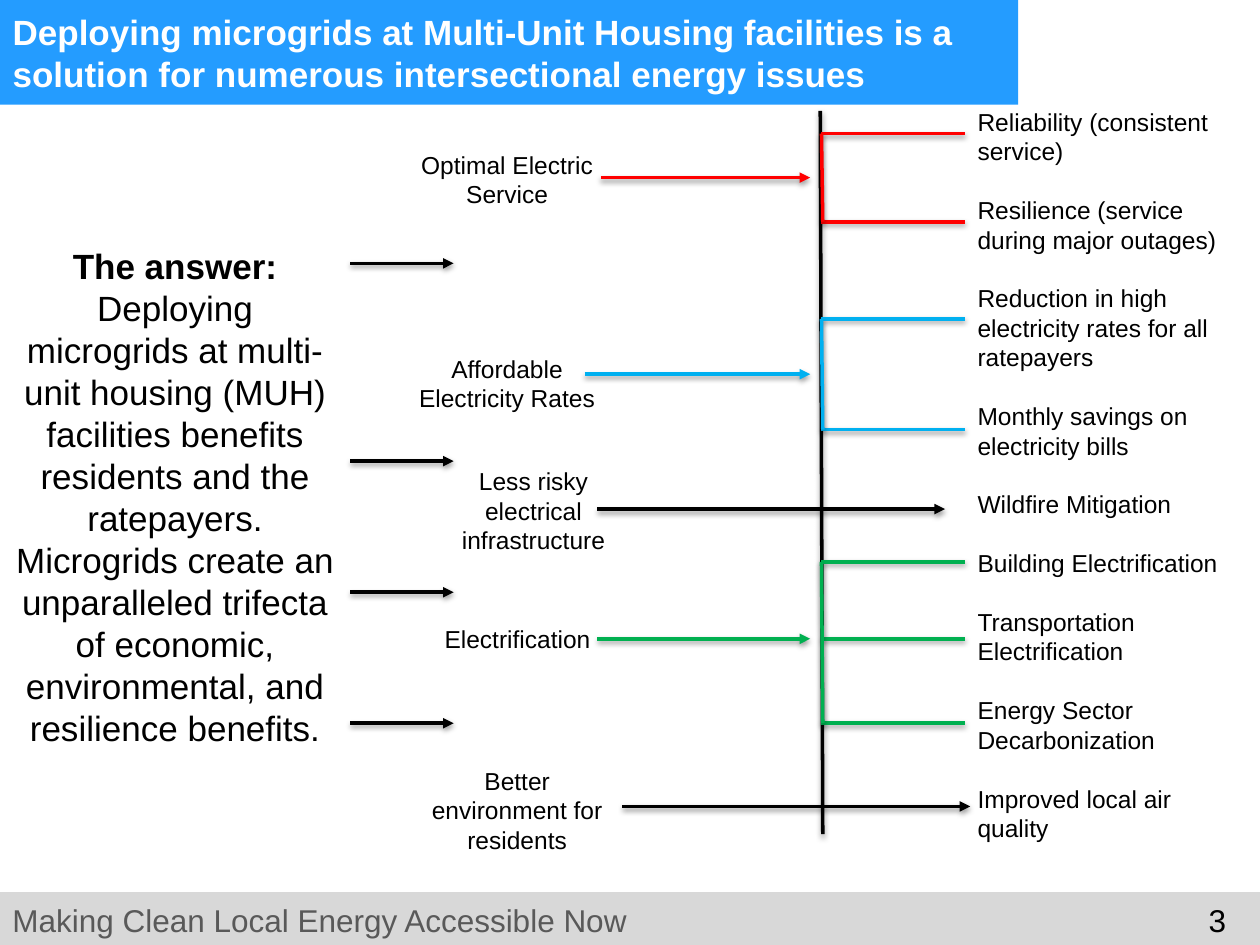
from pptx import Presentation
from pptx.dml.color import RGBColor
from pptx.enum.shapes import MSO_CONNECTOR, MSO_SHAPE
from pptx.enum.text import MSO_ANCHOR, MSO_AUTO_SIZE, PP_ALIGN
from pptx.oxml import parse_xml
from pptx.oxml.ns import nsdecls, qn
from pptx.util import Pt

PX = 9144
BLACK, WHITE, RED, CYAN, GREEN = "000000", "FFFFFF", "FF0000", "00B0F0", "00B050"
BLUE, PALE_GREY, DARK_GREY = "249CFF", "D8D8D8", "595959"
LEFT, CENTER, RIGHT = PP_ALIGN.LEFT, PP_ALIGN.CENTER, PP_ALIGN.RIGHT
AXIS_X, BRANCH_END = 652, 766


def color(hex_text):
    return RGBColor.from_string(hex_text)


class SlideBuilder:
    """Holds the slide style and adds each kind of element to the current slide."""

    font_name = "Arial"
    leading = 1.2

    def __init__(self, page):
        self.page = page

    def format_paragraph(self, paragraph, size, ink, align, bold=False):
        paragraph.alignment = align
        paragraph.line_spacing = Pt(size * self.leading)
        font = paragraph.font
        font.name, font.size, font.bold = self.font_name, Pt(size), bold
        font.color.rgb = color(ink)

    def title(self, text, left, top, width, height):
        box = self.page.shapes.title
        box.left, box.top, box.width, box.height = (
            n * PX for n in (left, top, width, height))
        box.fill.solid()
        box.fill.fore_color.rgb = color(BLUE)
        frame = box.text_frame
        frame.text = text
        frame.word_wrap = True
        frame.auto_size = MSO_AUTO_SIZE.NONE
        frame.vertical_anchor = MSO_ANCHOR.MIDDLE
        frame.margin_right = 18 * PX
        self.format_paragraph(frame.paragraphs[0], 20, WHITE, LEFT, bold=True)

    def band(self, left, top, width, height, fill):
        shape = self.page.shapes.add_shape(
            MSO_SHAPE.RECTANGLE, *(n * PX for n in (left, top, width, height)))
        shape.shadow.inherit = False
        shape.fill.solid()
        shape.fill.fore_color.rgb = color(fill)
        shape.line.fill.background()

    def text(self, texts, left, top, width, height, size=14, ink=BLACK,
             align=LEFT, gap=0, bold_first=False):
        box = self.page.shapes.add_textbox(*(n * PX for n in (left, top, width, height)))
        frame = box.text_frame
        frame.word_wrap = True
        for index, text in enumerate(texts):
            paragraph = frame.add_paragraph() if index else frame.paragraphs[0]
            paragraph.text = text
            self.format_paragraph(paragraph, size, ink, align, bold_first and index == 0)
            if index and gap:
                paragraph.space_before = Pt(gap)

    def line(self, x1, y1, x2, y2, ink=BLACK, arrow=False):
        connector = self.page.shapes.add_connector(
            MSO_CONNECTOR.STRAIGHT, *(n * PX for n in (x1, y1, x2, y2)))
        connector.line.width = Pt(2)
        connector.line.color.rgb = color(ink)
        properties = connector._element.spPr
        if arrow:
            properties.find(qn("a:ln")).append(
                parse_xml(f'<a:tailEnd {nsdecls("a")} type="triangle"/>'))
        properties.append(parse_xml(
            f'<a:effectLst {nsdecls("a")}><a:outerShdw blurRad="{Pt(3.1)}" '
            f'dist="{Pt(1.6)}" dir="5400000" rotWithShape="0"><a:srgbClr val="{BLACK}">'
            '<a:alpha val="38000"/></a:srgbClr></a:outerShdw></a:effectLst>'))

    def bracket(self, ink, branches):
        for y in branches:
            self.line(AXIS_X, y, BRANCH_END, y, ink)
        self.line(AXIS_X, branches[0], AXIS_X + 1, branches[-1], ink)


def main():
    deck = Presentation()
    deck.slide_width, deck.slide_height = 1000 * PX, 750 * PX
    slide = SlideBuilder(deck.slides.add_slide(deck.slide_layouts[5]))

    slide.title("Deploying microgrids at Multi-Unit Housing facilities is a "
                "solution for numerous intersectional energy issues", 0, 0, 808, 83)
    slide.band(0, 708, 1000, 42, PALE_GREY)
    slide.text(["Making Clean Local Energy Accessible Now"],
               0, 710, 911, 40, size=18, ink=DARK_GREY)
    slide.text(["3"], 911, 710, 72, 40, size=18, align=RIGHT)

    slide.text(
        ["The answer:",
         "Deploying microgrids at multi-unit housing (MUH) facilities benefits "
         "residents and the ratepayers. Microgrids create an unparalleled trifecta "
         "of economic, environmental, and resilience benefits."],
        1, 189, 276, 414, size=20, align=CENTER, bold_first=True)
    for y in (209, 366, 470, 574):
        slide.line(278, y, 360, y, arrow=True)

    outcomes = [
        "Reliability (consistent service)",
        "Resilience (service during major outages)",
        "Reduction in high electricity rates for all ratepayers",
        "Monthly savings on electricity bills",
        "Wildfire Mitigation",
        "Building Electrification",
        "Transportation Electrification",
        "Energy Sector Decarbonization",
        "Improved local air\vquality",
    ]
    slide.text(outcomes, 766, 80, 238, 646, gap=14 * slide.leading)

    slide.line(651, 88, 653, 662)
    for ink, branches in ((RED, (106, 176)), (CYAN, (253, 341)),
                          (GREEN, (446, 507, 574))):
        slide.bracket(ink, branches)

    benefits = [
        ("Optimal Electric Service", (295, 114, 215, 57), CENTER, (477, 643, 141), RED),
        ("Affordable Electricity Rates", (319, 276, 167, 57), CENTER, (464, 643, 297), CYAN),
        ("Less risky electrical infrastructure", (350, 365, 147, 81), CENTER,
         (474, 750, 404), BLACK),
        ("Electrification", (343, 490, 186, 34), LEFT, (474, 643, 507), GREEN),
        ("Better environment for residents", (327, 603, 167, 81), CENTER,
         (494, 770, 640), BLACK),
    ]
    for label, place, align, (start, end, y), ink in benefits:
        slide.text([label], *place, align=align)
        slide.line(start, y, end, y, ink, arrow=True)

    deck.save("out.pptx")


if __name__ == "__main__":
    main()
